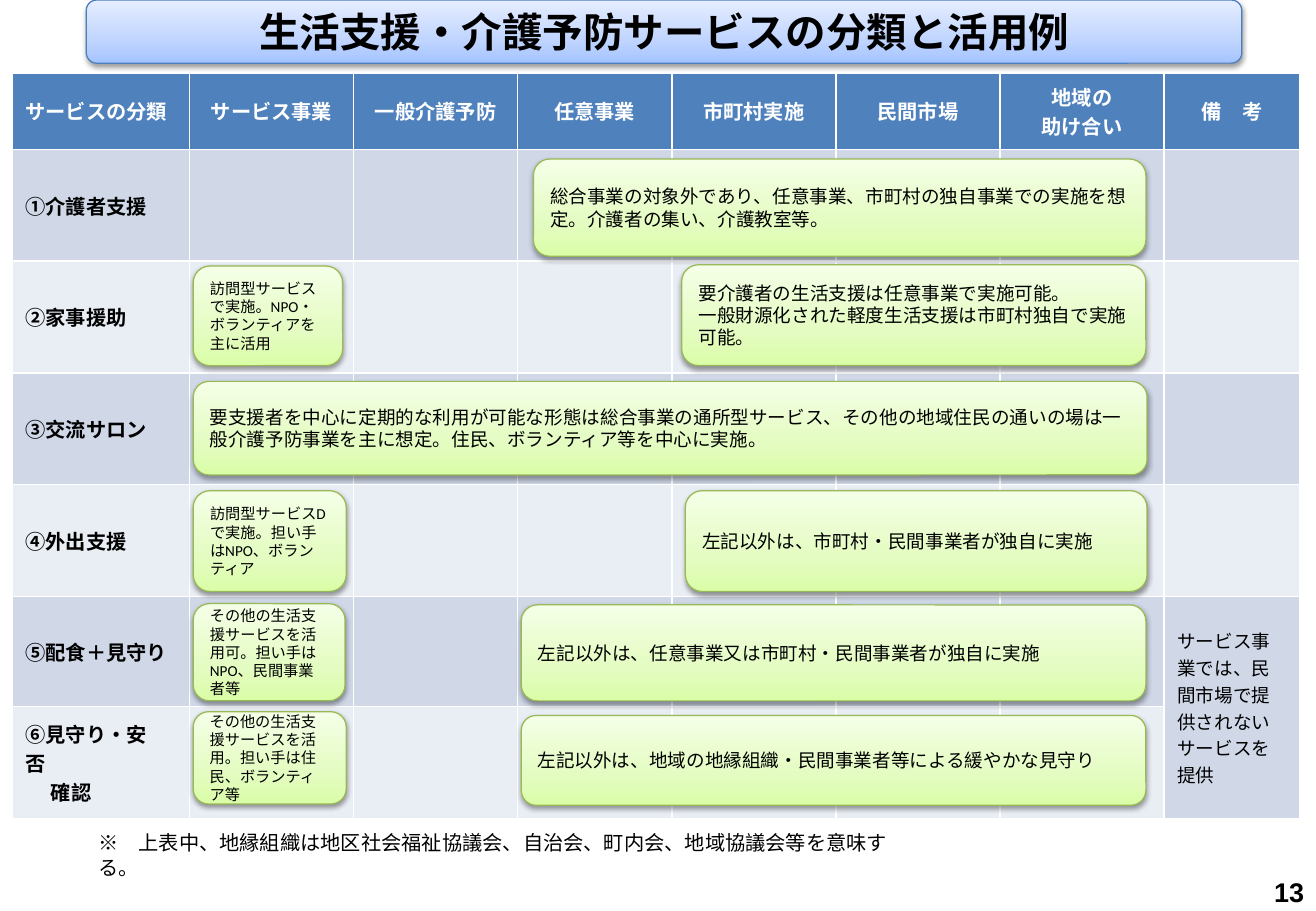
from copy import deepcopy
from dataclasses import dataclass
from itertools import accumulate

from lxml.etree import SubElement
from pptx import Presentation
from pptx.dml.color import RGBColor
from pptx.enum.shapes import MSO_SHAPE as Shape
from pptx.enum.text import MSO_ANCHOR as Anchor, PP_ALIGN as Align
from pptx.oxml.ns import qn
from pptx.util import Inches, Pt


@dataclass(frozen=True)
class Theme:
    heading_font: str = "Arial"
    body_font: str = "Calibri"
    ink: str = "000000"
    header_ink: str = "FFFFFF"
    header_fill: str = "4F81BD"
    bands: tuple = ("D0D8E8", "E9EDF4")
    blue: tuple = ("A4C4FF", "BFD4FF", "E6EEFF")
    blue_line: str = "4B7EBC"
    green: tuple = ("DAFDA7", "E4FCC2", "F5FFE7")
    green_line: str = "98B955"
    title_size: float = 24
    number_size: float = 16
    table_size: float = 12
    card_size: float = 11
    small_size: float = 9
    card_leading: float = 1.2


@dataclass(frozen=True)
class Box:
    left: float
    top: float
    width: float
    height: float

    def inches(self):
        return [Inches(value) for value in (self.left, self.top, self.width, self.height)]


THEME = Theme()
COLUMNS = (1.46, 1.35, 1.35, 1.27, 1.35, 1.35, 1.35, 1.12)
ROWS = (0.63, 0.92, 0.92, 0.92, 0.92, 0.91, 0.92)
HEADERS = ("サービスの分類", "サービス事業", "一般介護予防", "任意事業",
           "市町村実施", "民間市場", "地域の\n助け合い", "備　考")
SERVICES = ("①介護者支援", "②家事援助", "③交流サロン", "④外出支援",
            "⑤配食＋見守り", "⑥見守り・安\v否\n確認")
REMARK = "サービス事業では、民間市場で提供されないサービスを提供"
CARDS = (
    (1, Box(4.29, 0.08, 5.04, 0.8),
     "総合事業の対象外であり、任意事業、市町村の独自事業での実施を想定。介護者の集い、介護教室等。"),
    (2, Box(5.51, 0.03, 3.82, 0.83),
     "要介護者の生活支援は任意事業で実施可能。\n一般財源化された軽度生活支援は市町村独自で実施可能。"),
    (2, Box(1.49, 0.04, 1.23, 0.82), "訪問型サービスで実施。NPO・ボランティアを主に活用"),
    (3, Box(1.49, 0.07, 7.85, 0.77),
     "要支援者を中心に定期的な利用が可能な形態は総合事業の通所型サービス、"
     "その他の地域住民の通いの場は一般介護予防事業を主に想定。住民、ボランティア等を中心に実施。"),
    (4, Box(1.49, 0.05, 1.26, 0.83), "訪問型サービスDで実施。担い手はNPO、ボランティア"),
    (4, Box(5.54, 0.05, 3.8, 0.83), "左記以外は、市町村・民間事業者が独自に実施"),
    (5, Box(1.49, 0.06, 1.25, 0.8),
     "その他の生活支援サービスを活用可。担い手はNPO、民間事業者等"),
    (5, Box(4.19, 0.07, 5.14, 0.79),
     "左記以外は、任意事業又は市町村・民間事業者が独自に実施"),
    (6, Box(1.49, 0.04, 1.26, 0.76),
     "その他の生活支援サービスを活用。担い手は住民、ボランティア等"),
    (6, Box(4.19, 0.07, 5.14, 0.74),
     "左記以外は、地域の地縁組織・民間事業者等による緩やかな見守り"),
)


def color(code):
    return RGBColor.from_string(code)


def write(frame, text, size, font, ink=THEME.ink, bold=False, align=Align.LEFT, leading=None):
    frame.text = text
    for para in frame.paragraphs:
        para.alignment = align
        para.font.name = font
        para.font.size = Pt(size)
        para.font.bold = bold
        para.font.color.rgb = color(ink)
        if leading:
            para.line_spacing = Pt(round(size * leading, 1))


def add_shadow(shape):
    shape.shadow.inherit = False
    effects = shape.element.spPr.find(qn("a:effectLst"))
    shadow = SubElement(effects, qn("a:outerShdw"), blurRad="40000", dist="20000",
                        dir="5400000", rotWithShape="0")
    black = SubElement(shadow, qn("a:srgbClr"), val="000000")
    SubElement(black, qn("a:alpha"), val="38000")


def add_panel(page, box, shades, outline):
    panel = page.shapes.add_shape(Shape.ROUNDED_RECTANGLE, *box.inches())
    panel.fill.gradient()
    panel.fill.gradient_angle = 90
    stops = panel.element.spPr.find(qn("a:gradFill")).find(qn("a:gsLst"))
    stops.insert(1, deepcopy(stops[0]))
    for stop, shade, position in zip(panel.fill.gradient_stops, shades, (0, 0.35, 1)):
        stop.color.rgb = color(shade)
        stop.position = position
    panel.line.color.rgb = color(outline)
    panel.line.width = Pt(0.75)
    add_shadow(panel)
    panel.text_frame.word_wrap = True
    panel.text_frame.vertical_anchor = Anchor.MIDDLE
    return panel


def add_title(page, box):
    panel = add_panel(page, box, THEME.blue, THEME.blue_line)
    write(panel.text_frame, "生活支援・介護予防サービスの分類と活用例", THEME.title_size,
          THEME.heading_font, bold=True, align=Align.CENTER)


def add_service_table(page, box):
    table = page.shapes.add_table(len(ROWS), len(COLUMNS), *box.inches()).table
    for column, width in zip(table.columns, COLUMNS):
        column.width = Inches(width)
    for index, height in enumerate(ROWS):
        table.rows[index].height = Inches(height)
        for cell in table.rows[index].cells:
            cell.fill.solid()
            cell.fill.fore_color.rgb = color(THEME.bands[(index - 1) % 2] if index
                                             else THEME.header_fill)
            cell.vertical_anchor = Anchor.MIDDLE
            cell.margin_left = cell.margin_right = Inches(0.11)
    for index, text in enumerate(HEADERS):
        write(table.cell(0, index).text_frame, text, THEME.table_size, THEME.heading_font,
              THEME.header_ink, True, Align.CENTER if index else Align.LEFT)
    for index, text in enumerate(SERVICES, 1):
        write(table.cell(index, 0).text_frame, text, THEME.table_size, THEME.heading_font,
              bold=True)
    last_line = table.cell(len(SERVICES), 0).text_frame.paragraphs[-1]
    last_line._p.get_or_add_pPr().set("marL", str(Inches(0.21)))
    remark = table.cell(5, 7)
    remark.merge(table.cell(6, 7))
    write(remark.text_frame, REMARK, THEME.card_size, THEME.body_font)


def add_cards(page, box):
    row_tops = list(accumulate(ROWS, initial=box.top))
    for row, place, text in CARDS:
        spot = Box(box.left + place.left, row_tops[row] + place.top, place.width, place.height)
        card = add_panel(page, spot, THEME.green, THEME.green_line)
        size = THEME.small_size if place.width < 2 else THEME.card_size
        write(card.text_frame, text, size, THEME.body_font, leading=THEME.card_leading)


def add_footnote(page, box):
    frame = page.shapes.add_textbox(*box.inches()).text_frame
    frame.word_wrap = True
    write(frame, "※　上表中、地縁組織は地区社会福祉協議会、自治会、町内会、地域協議会等を意味する。",
          THEME.table_size, THEME.body_font, leading=THEME.card_leading)


def add_page_number(page, box):
    frame = page.shapes.add_textbox(*box.inches()).text_frame
    frame.word_wrap = True
    frame.vertical_anchor = Anchor.MIDDLE
    write(frame, "13", THEME.number_size, THEME.heading_font, bold=True, align=Align.RIGHT)


def main():
    deck = Presentation()
    deck.slide_width = Inches(10.83)
    deck.slide_height = Inches(7.5)
    page = deck.slides.add_slide(deck.slide_layouts[6])
    grid = Box(0.1, 0.6, sum(COLUMNS), sum(ROWS))
    add_title(page, Box(0.71, 0, 9.51, 0.52))
    add_service_table(page, grid)
    add_cards(page, grid)
    add_footnote(page, Box(0.71, 6.79, 6.83, 0.3))
    add_page_number(page, Box(10.29, 7.2, 0.54, 0.28))
    deck.save("out.pptx")


if __name__ == "__main__":
    main()
